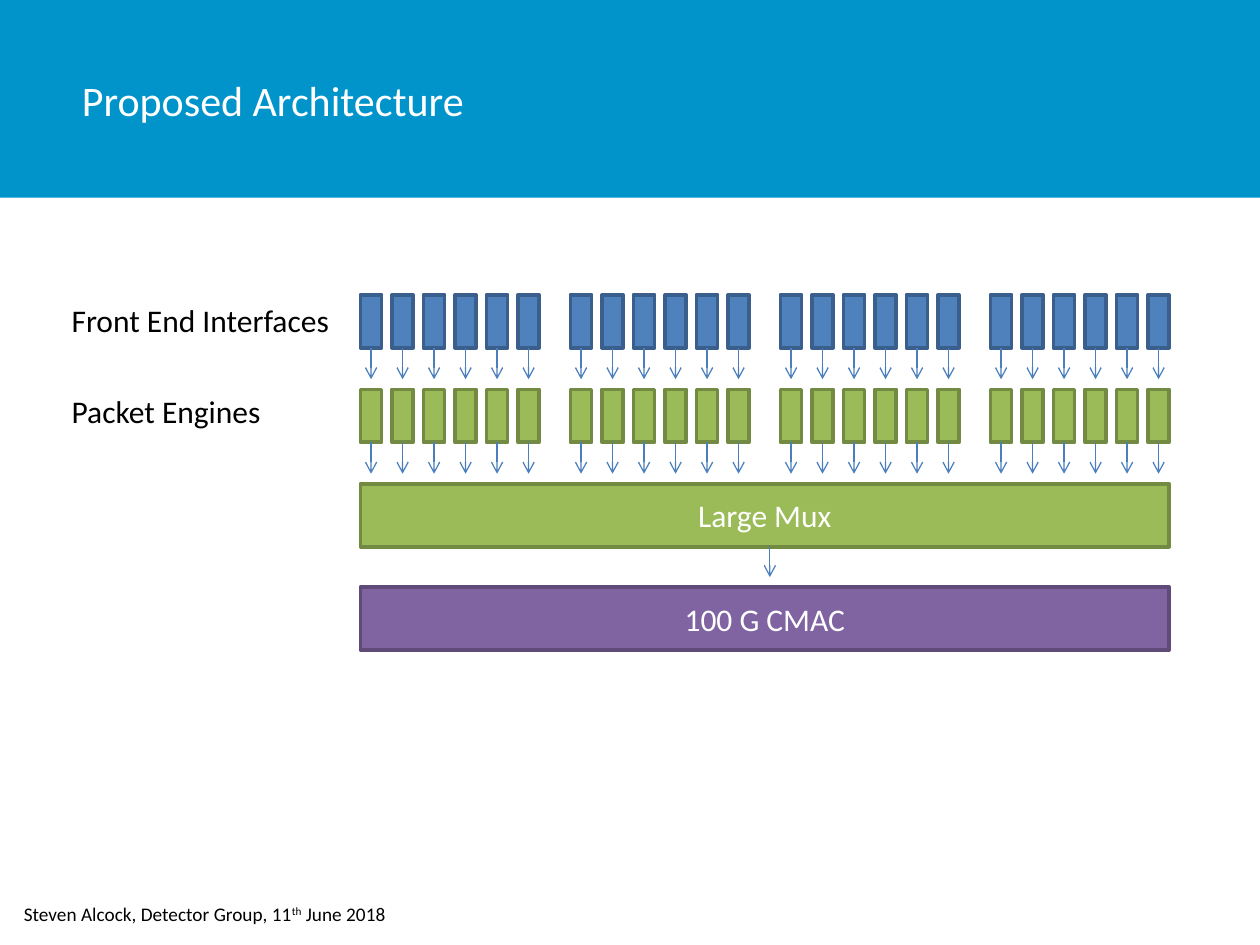
from lxml.etree import SubElement
from pptx import Presentation
from pptx.dml.color import RGBColor
from pptx.enum.shapes import MSO_CONNECTOR as Connector, MSO_SHAPE as Shape
from pptx.enum.text import MSO_ANCHOR as Anchor, MSO_AUTO_SIZE as AutoSize, PP_ALIGN as Align
from pptx.oxml.ns import qn
from pptx.util import Inches, Pt

FONT = "Calibri"
WHITE, BLACK, BANNER, ARROW = "FFFFFF", "000000", "0094CA", "4B7EBC"
BLUE = ("4F81BD", "3A5F8C")
GREEN = ("9BBB59", "738A42")
PURPLE = ("8064A2", "5F4A78")
LEFT, WIDTH = 2.86, 6.42
GROUPS, LANES = 4, 6
GROUP_STEP, LANE_STEP = 5 / 3, 0.25
BLOCK_WIDTH, BLOCK_HEIGHT = 0.17, 0.42
ARROW_LENGTH = 0.25


def color(value):
    """Turn a hex string into a colour."""
    return RGBColor.from_string(value)


def format_text(frame, size, tint, align=Align.LEFT):
    """Apply font, size, colour and alignment to all the text of a frame."""
    for para in frame.paragraphs:
        para.alignment = align
        for span in para.runs:
            span.font.name = FONT
            span.font.size = Pt(size)
            span.font.color.rgb = color(tint)


def add_block(page, left, top, width, height, fill, outline=None, label=""):
    """Add a filled rectangle with an optional outline and centred label."""
    block = page.shapes.add_shape(
        Shape.RECTANGLE, Inches(left), Inches(top), Inches(width), Inches(height))
    block.shadow.inherit = False
    block.fill.solid()
    block.fill.fore_color.rgb = color(fill)
    if outline:
        block.line.color.rgb = color(outline)
        block.line.width = Pt(2)
    else:
        block.line.fill.background()
    if label:
        block.text_frame.text = label
        block.text_frame.vertical_anchor = Anchor.MIDDLE
        format_text(block.text_frame, 18, WHITE, Align.CENTER)
    return block


def add_line(page, start, end, tint, weight):
    """Add a straight line between two points."""
    line = page.shapes.add_connector(
        Connector.STRAIGHT, *(Inches(value) for value in (*start, *end)))
    line.line.color.rgb = color(tint)
    line.line.width = Pt(weight)
    SubElement(line._element.spPr, qn("a:effectLst"))
    return line


def add_down_arrow(page, x, top):
    """Add a short arrow pointing down."""
    arrow = add_line(page, (x, top), (x, top + ARROW_LENGTH), ARROW, 0.75)
    SubElement(arrow.line._get_or_add_ln(), qn("a:tailEnd"), type="arrow")


def add_lane_row(page, top, colors):
    """Add a row of grouped blocks, each with an arrow below it."""
    for group in range(GROUPS):
        for lane in range(LANES):
            left = LEFT + group * GROUP_STEP + lane * LANE_STEP
            add_block(page, left, top, BLOCK_WIDTH, BLOCK_HEIGHT, *colors)
            add_down_arrow(page, left + BLOCK_WIDTH / 2, top + BLOCK_HEIGHT)


def add_label(page, left, top, width, height, parts, size):
    """Add a one-line text box made of one run per part."""
    box = page.shapes.add_textbox(
        Inches(left), Inches(top), Inches(width), Inches(height))
    frame = box.text_frame
    frame.word_wrap = False
    frame.auto_size = AutoSize.SHAPE_TO_FIT_TEXT
    for part in parts:
        frame.paragraphs[0].add_run().text = part
    format_text(frame, size, BLACK)
    return frame.paragraphs[0]


def add_header(page):
    """Add the banner behind the title, and fill in the title."""
    banner = add_block(page, 0, 0, 10, 1.57, BANNER)
    page.shapes._spTree.insert(2, banner._element)
    add_line(page, (-0.36, 1.59), (10.25, 1.59), WHITE, 0.5)
    title = page.shapes.title
    title.left, title.top = Inches(0.65), Inches(0)
    title.width, title.height = Inches(6.63), Inches(1.58)
    frame = title.text_frame
    frame.text = "Proposed Architecture"
    frame.margin_left = frame.margin_right = frame.margin_top = frame.margin_bottom = 0
    frame.vertical_anchor = Anchor.MIDDLE
    format_text(frame, 24, WHITE)


def add_footer(page):
    """Add the author line with its raised ordinal."""
    parts = ("Steven Alcock, Detector Group, 11", "th", " June 2018")
    para = add_label(page, 0.09, 7.11, 3.12, 0.29, parts, 11)
    para.runs[1].font._element.set("baseline", "30000")


def main():
    """Build and save the deck."""
    deck = Presentation()
    deck.slide_width, deck.slide_height = Inches(10), Inches(7.5)
    page = deck.slides.add_slide(deck.slide_layouts[5])
    add_header(page)
    add_footer(page)
    add_lane_row(page, 2.34, BLUE)
    add_lane_row(page, 3.09, GREEN)
    add_block(page, LEFT, 3.84, WIDTH, 0.5, *GREEN, "Large Mux")
    add_block(page, LEFT, 4.66, WIDTH, 0.5, *PURPLE, "100 G CMAC")
    add_down_arrow(page, 6.11, 4.33)
    add_label(page, 0.47, 2.34, 2.27, 0.4, ["Front End Interfaces"], 18)
    add_label(page, 0.47, 3.06, 1.72, 0.4, ["Packet Engines"], 18)
    deck.save("out.pptx")


if __name__ == "__main__":
    main()
